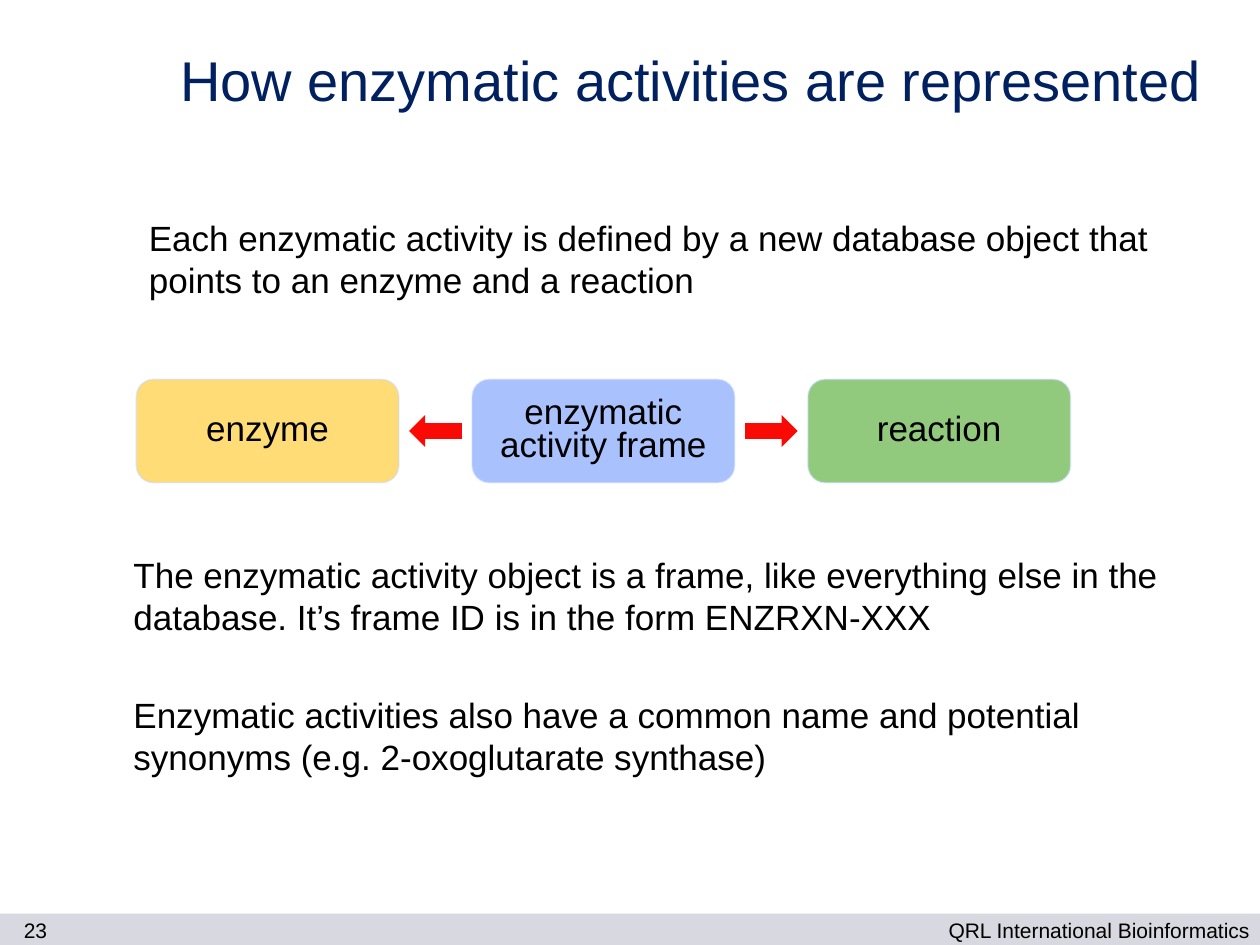
from dataclasses import dataclass

from lxml import etree
from pptx import Presentation
from pptx.dml.color import RGBColor
from pptx.enum import shapes, text
from pptx.oxml.ns import qn
from pptx.util import Cm, Pt


@dataclass(frozen=True)
class Theme:
    font: str = "Arial"
    title_size: int = 32
    body_size: int = 20
    footer_size: int = 12
    title: str = "002060"
    ink: str = "000000"
    bar: str = "D8D8E0"
    enzyme: str = "FFC000"
    frame: str = "618FFD"
    reaction: str = "349E0E"
    outline: str = "C0D2FE"
    arrow: str = "FA0A04"
    fill_alpha: int = 54
    line_alpha: int = 38


class Deck:
    def __init__(self, theme):
        self.theme = theme
        self.prs = Presentation()
        self.prs.slide_width, self.prs.slide_height = Cm(25.4), Cm(19.05)
        self.slide = None

    def add_slide(self):
        self.slide = self.prs.slides.add_slide(self.prs.slide_layouts[1])

    def set_text(self, sp, lines, size, color, align, anchor, insets, spacing=1.0, gap=0):
        tf = sp.text_frame
        tf.word_wrap = True
        tf.auto_size = text.MSO_AUTO_SIZE.NONE
        tf.vertical_anchor = anchor
        tf.margin_left, tf.margin_top, tf.margin_right, tf.margin_bottom = map(Cm, insets)
        for i, line in enumerate(lines):
            p = tf.paragraphs[0] if i == 0 else tf.add_paragraph()
            p.text = line
            p.alignment = align
            p.line_spacing = spacing
            p.space_before = Pt(gap if i else 0)
            p.font.name = self.theme.font
            p.font.size = Pt(size)
            p.font.color.rgb = RGBColor.from_string(color)

    def place(self, sp, at):
        sp.left, sp.top, sp.width, sp.height = map(Cm, at)

    def title(self, at, line):
        sp = self.slide.shapes.title
        self.place(sp, at)
        self.set_text(sp, [line], self.theme.title_size, self.theme.title,
                      text.PP_ALIGN.LEFT, text.MSO_ANCHOR.MIDDLE, (0.25, 0.13, 0.25, 0.13))

    def body(self, at, line):
        sp = self.slide.placeholders[1]
        self.place(sp, at)
        self.set_text(sp, [line], self.theme.body_size, self.theme.ink,
                      text.PP_ALIGN.LEFT, text.MSO_ANCHOR.TOP, (0.25, 0.13, 0.25, 0.13))
        for p in sp.text_frame.paragraphs:
            props = p._p.get_or_add_pPr()
            props.set("marL", "0")
            props.set("indent", "0")
            props.insert_element_before(props.makeelement(qn("a:buNone")),
                                        "a:tabLst", "a:defRPr", "a:extLst")

    def text_box(self, at, lines, size, align=text.PP_ALIGN.LEFT, right=0.25, gap=0):
        sp = self.slide.shapes.add_textbox(*map(Cm, at))
        self.set_text(sp, lines, size, self.theme.ink, align, text.MSO_ANCHOR.TOP,
                      (0.25, 0.13, right, 0.13), gap=gap)

    def shape(self, kind, at, fill):
        sp = self.slide.shapes.add_shape(kind, *map(Cm, at))
        sp.shadow.inherit = False
        sp.fill.solid()
        sp.fill.fore_color.rgb = RGBColor.from_string(fill)
        sp.line.fill.background()
        return sp

    def box(self, at, label, fill):
        sp = self.shape(shapes.MSO_SHAPE.ROUNDED_RECTANGLE, at, fill)
        sp.line.color.rgb = RGBColor.from_string(self.theme.outline)
        sp.line.width = Pt(1)
        alphas = self.theme.fill_alpha, self.theme.line_alpha
        for color, alpha in zip(sp._element.spPr.iter(qn("a:srgbClr")), alphas):
            etree.SubElement(color, qn("a:alpha")).set("val", str(alpha * 1000))
        self.set_text(sp, [label], self.theme.body_size, self.theme.ink,
                      text.PP_ALIGN.CENTER, text.MSO_ANCHOR.MIDDLE, (0, 0.25, 0, 0.25), spacing=0.8)


def main():
    theme = Theme()
    deck = Deck(theme)
    deck.add_slide()

    deck.shape(shapes.MSO_SHAPE.RECTANGLE, (0, 18.42, 25.4, 0.63), theme.bar)
    deck.text_box((18.42, 18.36, 6.78, 0.76), ["QRL International Bioinformatics"],
                  theme.footer_size, text.PP_ALIGN.RIGHT, right=0)
    deck.text_box((0.08, 18.36, 1.27, 0.76), ["23"], theme.footer_size, text.PP_ALIGN.CENTER)

    deck.title((3.38, 0, 21.39, 3.18), "How enzymatic activities are represented")
    deck.body((2.75, 4.24, 21.39, 2.34),
              "Each enzymatic activity is defined by a new database object that "
              "points to an enzyme and a reaction")

    left, top, width, height, pitch = 2.75, 7.65, 5.29, 2.08, 6.77
    boxes = [("enzyme", theme.enzyme),
             ("enzymatic activity frame", theme.frame),
             ("reaction", theme.reaction)]
    for i, (label, fill) in enumerate(boxes):
        deck.box((left + i * pitch, top, width, height), label, fill)

    arrow_w, arrow_h = 1.06, 0.64
    arrow_left = left + (width + pitch - arrow_w) / 2
    arrow_top = top + (height - arrow_h) / 2
    arrows = [shapes.MSO_SHAPE.LEFT_ARROW, shapes.MSO_SHAPE.RIGHT_ARROW]
    for i, kind in enumerate(arrows):
        deck.shape(kind, (arrow_left + i * pitch, arrow_top, arrow_w, arrow_h), theme.arrow)

    deck.text_box((2.44, 11.02, 21.39, 5.49),
                  ["The enzymatic activity object is a frame, like everything else in the "
                   "database. It’s frame ID is in the form ENZRXN-XXX",
                   "Enzymatic activities also have a common name and potential "
                   "synonyms (e.g. 2-oxoglutarate synthase)"],
                  theme.body_size, gap=32)

    deck.prs.save("out.pptx")


if __name__ == "__main__":
    main()
